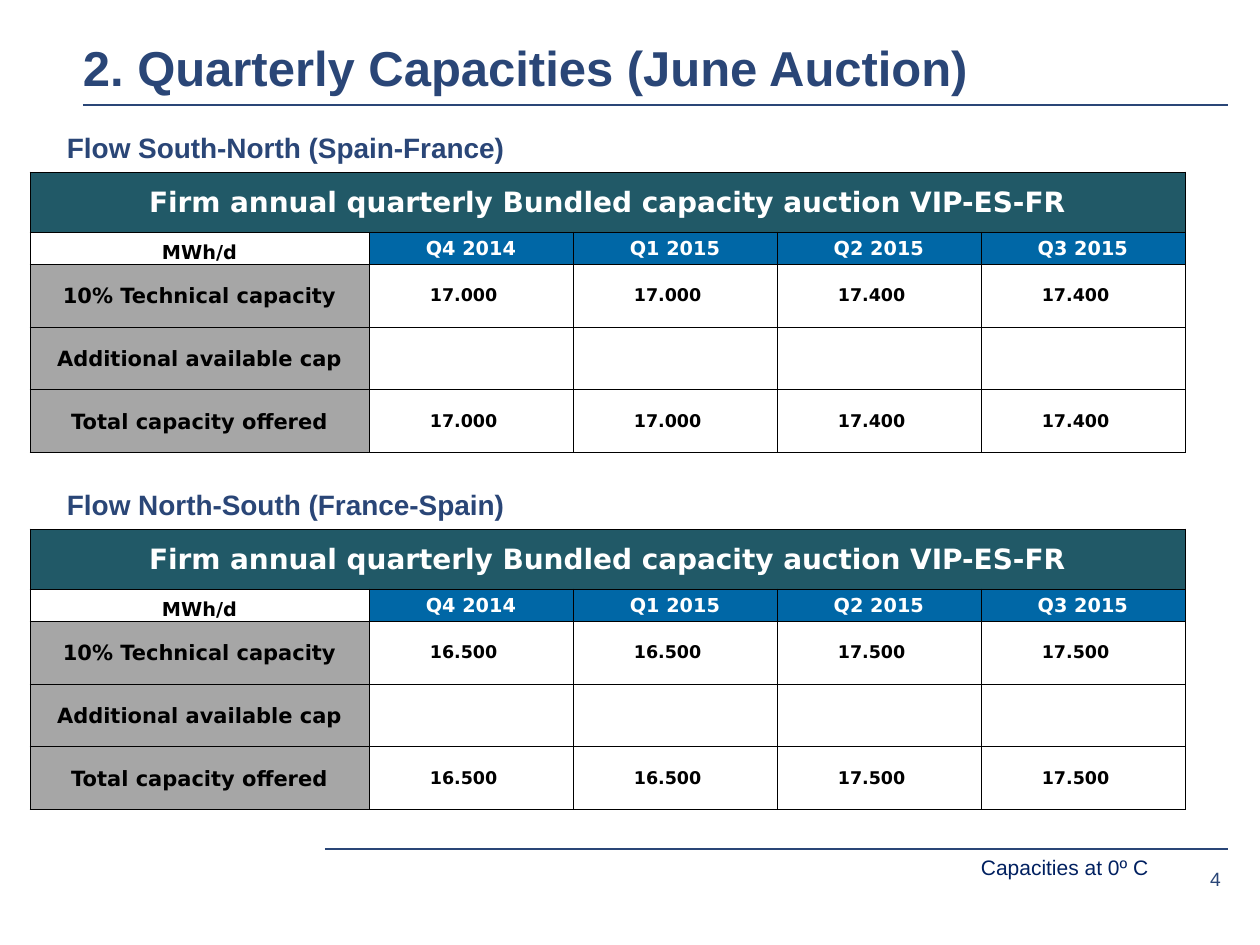
"""Build the slide of quarterly capacities offered in the June auction."""
from lxml.etree import SubElement
from pptx import Presentation
from pptx.dml.color import RGBColor
from pptx.enum.shapes import MSO_CONNECTOR
from pptx.enum.text import MSO_ANCHOR as ANCHOR, PP_ALIGN as ALIGN
from pptx.oxml import parse_xml
from pptx.oxml.ns import nsdecls, qn
from pptx.util import Pt

PX = 914400 // 126
COLORS = {
    "navy": "2A4677", "footnote": "002060", "banner": "215967", "quarter": "0067A6",
    "label": "A6A6A6", "white": "FFFFFF", "black": "000000",
}


def add_run(paragraph, text, size, font, color, bold):
    run = paragraph.add_run()
    run.text = text
    run.font.size = Pt(size)
    run.font.name = font
    run.font.bold = bold
    run.font.color.rgb = RGBColor.from_string(COLORS[color])


def add_text(box, text, size, color, bold=False, inset=(0, 0), anchor=ANCHOR.TOP, align=ALIGN.LEFT, wrap=True):
    frame = slide.shapes.add_textbox(*[v * PX for v in box]).text_frame
    frame.word_wrap = wrap
    frame.vertical_anchor = anchor
    frame.margin_left = frame.margin_right = inset[0] * PX
    frame.margin_top = frame.margin_bottom = inset[1] * PX
    frame.paragraphs[0].alignment = align
    add_run(frame.paragraphs[0], text, size, "Arial", color, bold)


prs = Presentation()
prs.slide_width, prs.slide_height = 1260 * PX, 945 * PX
slide = prs.slides.add_slide(prs.slide_layouts[6])

for left, y in ((83, 105), (325, 849)):
    rule = slide.shapes.add_connector(MSO_CONNECTOR.STRAIGHT, left * PX, y * PX, 1228 * PX, y * PX)
    rule.line.color.rgb = RGBColor.from_string(COLORS["navy"])
    rule.line.width = Pt(1.5)
    SubElement(rule._element.spPr, qn("a:effectLst"))

add_text((1126, 859, 95, 39), "4", 11, "navy", anchor=ANCHOR.MIDDLE, align=ALIGN.RIGHT, wrap=False)
add_text((83, 45, 1148, 51), "2. Quarterly Capacities (June Auction)", 28, "navy", True, anchor=ANCHOR.BOTTOM)

quarters = ["Q4 2014", "Q1 2015", "Q2 2015", "Q3 2015"]
column_widths = [339, 204, 204, 204, 204]
row_heights = [60, 32, 63, 63, 63]
flows = [
    (125, "Flow South-North (Spain-France)", ["17.000", "17.000", "17.400", "17.400"]),
    (482, "Flow North-South (France-Spain)", ["16.500", "16.500", "17.500", "17.500"]),
]

for top, heading, capacities in flows:
    rows = [
        ["Firm annual quarterly Bundled capacity auction VIP-ES-FR", "", "", "", ""],
        ["MWh/d", *quarters],
        ["10% Technical capacity", *capacities],
        ["Additional available cap", "", "", "", ""],
        ["Total capacity offered", *capacities],
    ]
    table = slide.shapes.add_table(
        5, 5, 30 * PX, (top + 47) * PX, sum(column_widths) * PX, sum(row_heights) * PX).table
    table.first_row = table.horz_banding = False
    for column, width in zip(table.columns, column_widths):
        column.width = width * PX
    for row, height in zip(table.rows, row_heights):
        row.height = height * PX

    for r, texts in enumerate(rows):
        for c, text in enumerate(texts):
            cell = table.cell(r, c)
            if r == 0:
                size, color, fill = 16, "white", "banner"
            elif r == 1:
                size, color, fill = (11, "white", "quarter") if c else (11, "black", None)
            else:
                size, color, fill = (10, "black", "white") if c else (12, "black", "label")
            is_value = r > 1 and c > 0
            cell.margin_left = (61 if is_value else 1) * PX
            cell.margin_right = cell.margin_top = PX
            cell.margin_bottom = 0
            cell.vertical_anchor = ANCHOR.BOTTOM if fill is None else ANCHOR.MIDDLE
            cell_props = cell._tc.get_or_add_tcPr()
            for side in ("lnL", "lnR", "lnT", "lnB"):
                cell_props.append(parse_xml(
                    f'<a:{side} {nsdecls("a")} w="{Pt(0.5)}"><a:solidFill>'
                    f'<a:srgbClr val="{COLORS["black"]}"/></a:solidFill></a:{side}>'))
            if fill:
                cell.fill.solid()
                cell.fill.fore_color.rgb = RGBColor.from_string(COLORS[fill])
            else:
                cell.fill.background()
            if text:
                paragraph = cell.text_frame.paragraphs[0]
                paragraph.alignment = ALIGN.LEFT if is_value else ALIGN.CENTER
                add_run(paragraph, text, size, "DejaVu Sans", color, True)
    table.cell(0, 0).merge(table.cell(0, 4))

    add_text((54, top, 558, 47), heading, 16, "navy", True, inset=(13, 6))

add_text((968, 849, 194, 38), "Capacities at 0º C", 12, "footnote", inset=(13, 6), wrap=False)

prs.save("out.pptx")
